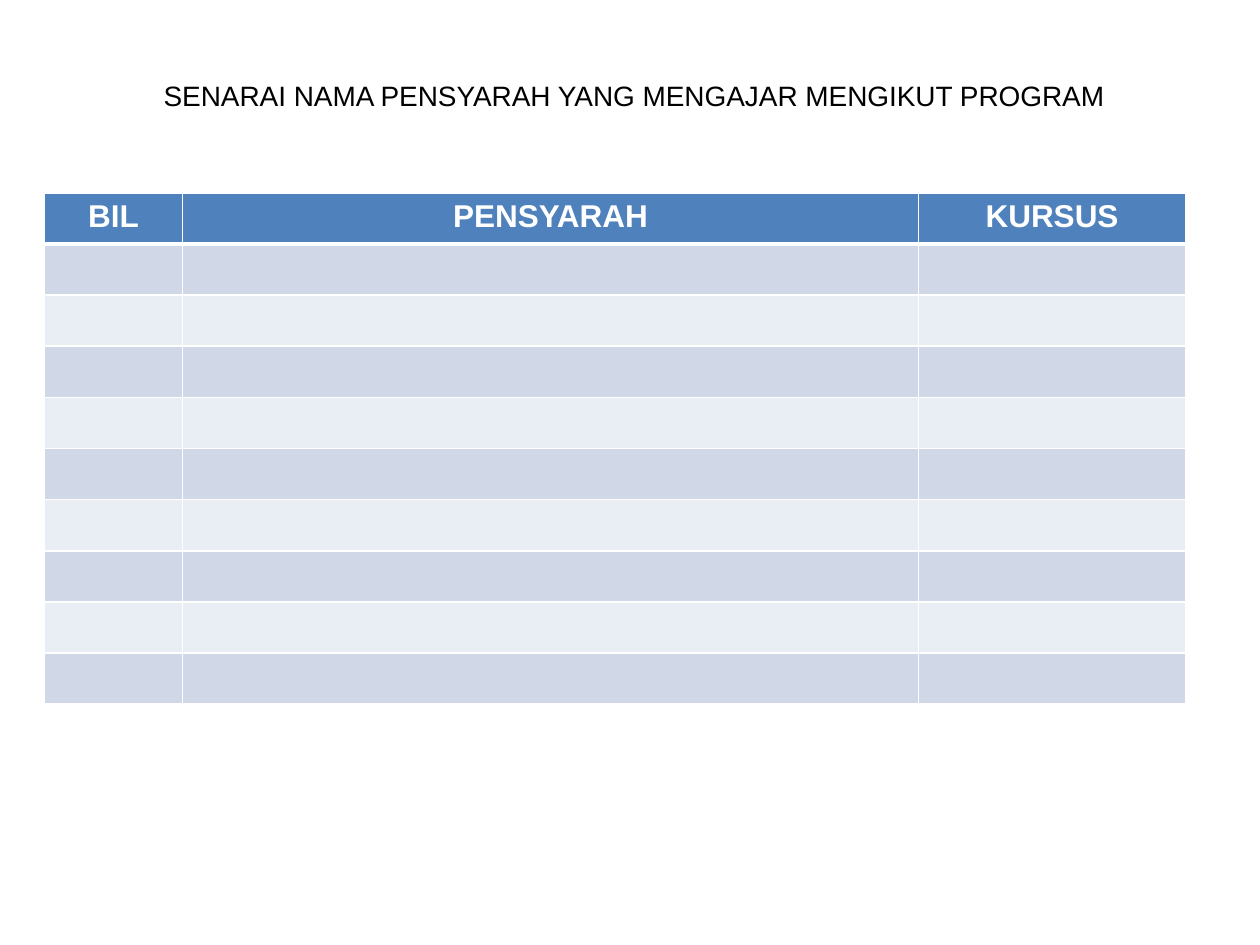
from lxml import etree
from pptx import Presentation
from pptx.dml.color import RGBColor
from pptx.enum import text
from pptx.oxml import ns
from pptx.util import Inches, Pt

BLACK = RGBColor(0x00, 0x00, 0x00)
WHITE = RGBColor(0xFF, 0xFF, 0xFF)
BLUE = RGBColor(0x4F, 0x81, 0xBD)
BANDS = [RGBColor(0xE9, 0xED, 0xF4), RGBColor(0xD0, 0xD8, 0xE8)]

HEADINGS = ["BIL", "PENSYARAH", "KURSUS"]
WIDTHS = [1.1, 5.84, 2.12]
ROWS = 10
TABLE_HEIGHT = 4.06


def write(para, words, color, **formats):
    para.alignment = text.PP_ALIGN.CENTER
    span = para.add_run()
    span.text = words
    for name, value in {"name": "Arial", **formats}.items():
        setattr(span.font, name, value)
    span.font.color.rgb = color


def add_borders(cell, bottom):
    props = cell._tc.get_or_add_tcPr()
    for side, width in {"L": 1, "R": 1, "T": 1, "B": bottom}.items():
        line = etree.SubElement(props, ns.qn(f"a:ln{side}"), w=str(Pt(width)))
        fill = etree.SubElement(line, ns.qn("a:solidFill"))
        etree.SubElement(fill, ns.qn("a:srgbClr"), val=str(WHITE))


deck = Presentation()
deck.slide_width, deck.slide_height = Inches(10), Inches(7.5)
page = deck.slides.add_slide(deck.slide_layouts[6])

# Title
box = page.shapes.add_textbox(Inches(0.28), Inches(0.36), Inches(9.51), Inches(0.79))
box.text_frame.word_wrap = True
box.text_frame.vertical_anchor = text.MSO_ANCHOR.MIDDLE
write(box.text_frame.paragraphs[0],
      "SENARAI NAMA PENSYARAH YANG MENGAJAR MENGIKUT PROGRAM",
      BLACK, size=Pt(16))

# Lecturer table
table = page.shapes.add_table(ROWS, len(HEADINGS), Inches(0.35), Inches(1.53),
                              Inches(sum(WIDTHS)), Inches(TABLE_HEIGHT)).table
for column, width in zip(table.columns, WIDTHS):
    column.width = Inches(width)

# Borders and banded fills
for number, row in enumerate(table.rows):
    row.height = Inches(TABLE_HEIGHT / ROWS)
    for cell in row.cells:
        add_borders(cell, bottom=1 if number else 3)
        cell.fill.solid()
        cell.fill.fore_color.rgb = BANDS[number % 2] if number else BLUE

# Column headings
for cell, heading in zip(table.rows[0].cells, HEADINGS):
    write(cell.text_frame.paragraphs[0], heading, WHITE, size=Pt(18), bold=True)

deck.save("out.pptx")
